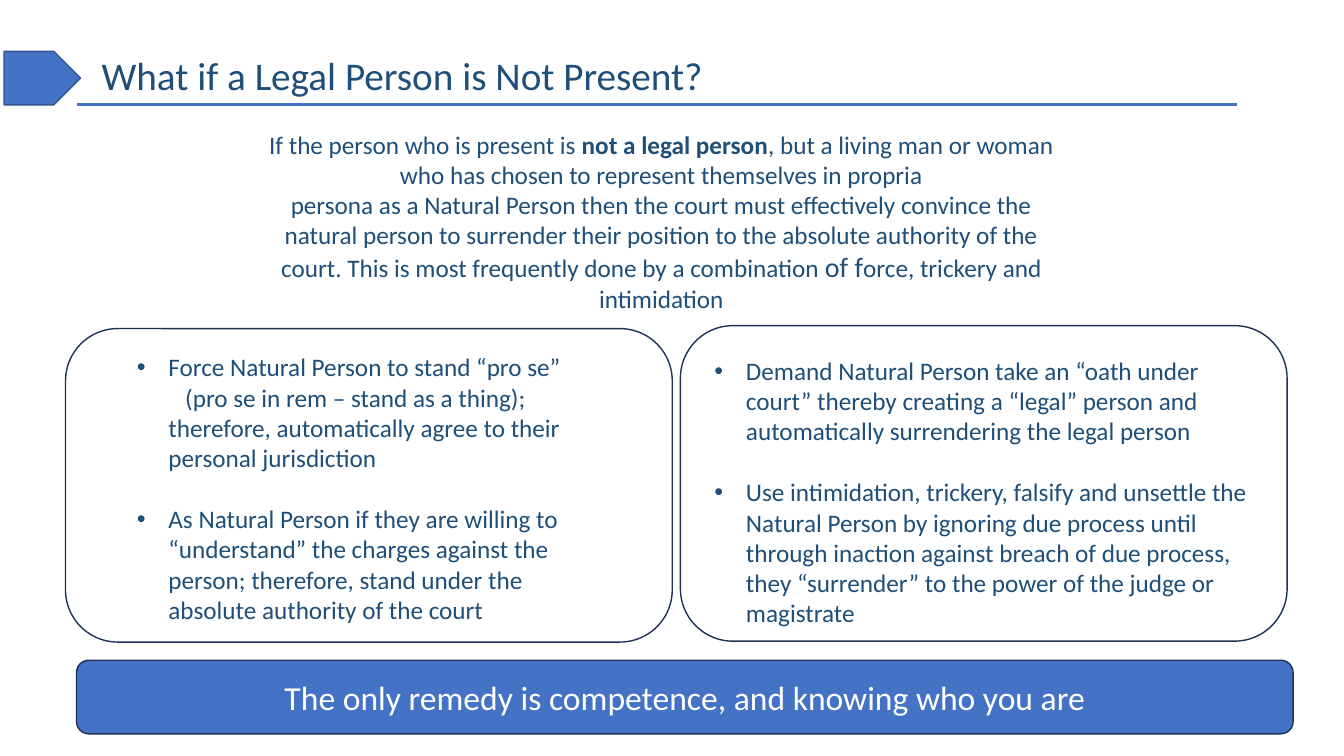
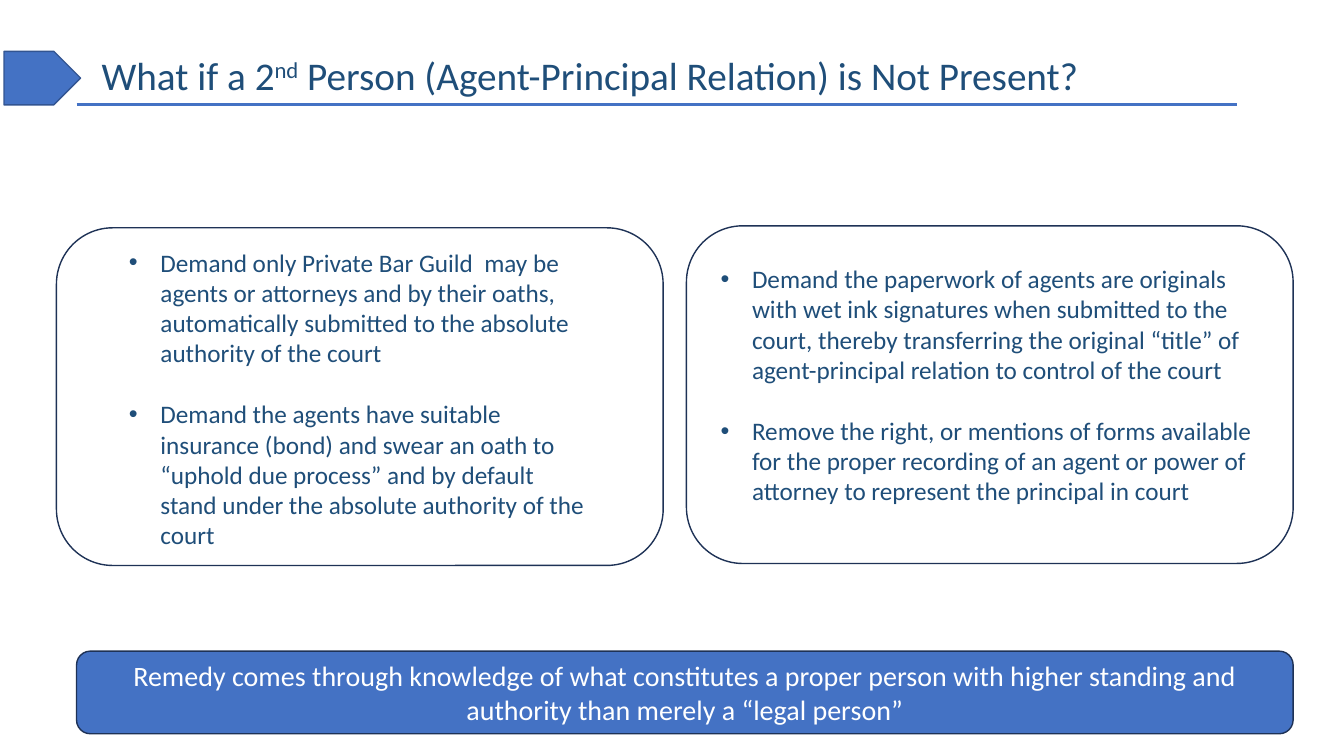
from pptx import Presentation
from pptx.dml.color import RGBColor
from pptx.enum import shapes, text
from pptx.oxml import parse_xml
from pptx.oxml.ns import nsdecls
from pptx.util import Pt

BLUE, EDGE, ARROW_EDGE = "4472C4", "1E3256", "325491"
NAVY, WHITE = "1F4E79", "FFFFFF"
FONT = "Calibri"
HANG = 22.5
LINE_GAP = 22
FRAME_W, BULLETS_W = 433.4, [345, 399]

SLIDES = [
    {
        "title": [("What if a Legal Person is Not Present?", {})],
        "intro": [
            [("If the person who is present is ", {}), ("not a legal person", {"bold": True}),
             (", but a living man or woman", {})],
            [("who has chosen to represent themselves in propria", {})],
            [("persona as a Natural Person then the court must effectively convince the", {})],
            [("natural person to surrender their position to the absolute authority of the", {})],
            [("court. This is most frequently done by a combination ", {}),
             ("of f", {"size": Pt(20)}), ("orce, trickery and", {})],
            [("intimidation", {})],
        ],
        "frames": [(46.8, 234.7, 223.9), (486, 232.6, 225.4)],
        "bullets": [
            (90.7, 247.7, 204, [
                ("bullet", "Force Natural Person to stand “pro se”"),
                (12, "(pro se in rem – stand as a thing);"),
                (0, "therefore, automatically agree to their personal jurisdiction"),
                ("bullet", "As Natural Person if they are willing to “understand” the charges "
                           "against the person; therefore, stand under the absolute authority "
                           "of the court"),
            ]),
            (503.3, 250.2, 204, [
                ("bullet", "Demand Natural Person take an “oath under court” thereby creating "
                           "a “legal” person and automatically surrendering the legal person"),
                ("bullet", "Use intimidation, trickery, falsify and unsettle the Natural Person "
                           "by ignoring due process until through inaction against breach of due "
                           "process, they “surrender” to the power of the judge or magistrate"),
            ]),
        ],
        "remedy": (471.6, 52.6, 24, "The only remedy is competence, and knowing who you are"),
    },
    {
        "title": [("What if a 2", {}), ("nd", {"baseline": "30000"}),
                  (" Person (Agent-Principal Relation) is Not Present?", {})],
        "intro": [],
        "frames": [(40.3, 162.7, 241.2), (490.3, 161.3, 241.2)],
        "bullets": [
            (85, 172.8, 225.4, [
                ("bullet", "Demand only Private Bar Guild  may be agents or attorneys and by "
                           "their oaths, automatically submitted to the absolute authority of "
                           "the court"),
                ("bullet", "Demand the agents have suitable insurance (bond) and swear an oath "
                           "to “uphold due process” and by default stand under the absolute "
                           "authority of the court"),
            ]),
            (507.6, 184.7, 182, [
                ("bullet", "Demand the paperwork of agents are originals with wet ink signatures "
                           "when submitted to the court, thereby transferring the original "
                           "“title” of agent-principal relation to control of the court"),
                ("bullet", "Remove the right, or mentions of forms available for the proper "
                           "recording of an agent or power of attorney to represent the "
                           "principal in court"),
            ]),
        ],
        "remedy": (465.1, 59, 20, "Remedy comes through knowledge of what constitutes a proper "
                                  "person with higher standing and authority than merely a "
                                  "“legal person”"),
    },
]


def color(hex_code):
    return RGBColor.from_string(hex_code)


def fill_text(tf, paragraphs, size, ink=NAVY, align=text.PP_ALIGN.LEFT):
    tf.word_wrap = True
    for i, runs in enumerate(paragraphs):
        p = tf.paragraphs[0] if i == 0 else tf.add_paragraph()
        p.alignment = align
        for words, style in runs:
            r = p.add_run()
            r.text = words
            r.font.name = FONT
            r.font.size = style.get("size", Pt(size))
            r.font.bold = style.get("bold")
            r.font.color.rgb = color(ink)
            if "baseline" in style:
                r._r.get_or_add_rPr().set("baseline", style["baseline"])


prs = Presentation()
prs.slide_width, prs.slide_height = Pt(960), Pt(540)

for content in SLIDES:
    s = prs.slides.add_slide(prs.slide_layouts[6])

    tf = s.shapes.add_textbox(Pt(65.5), Pt(36.7), Pt(720), Pt(37.4)).text_frame
    tf.vertical_anchor = text.MSO_ANCHOR.BOTTOM
    fill_text(tf, [content["title"]], 28)
    tf.paragraphs[0].line_spacing = 0.9

    rule = s.shapes.add_connector(shapes.MSO_CONNECTOR.STRAIGHT,
                                  Pt(54.7), Pt(74.9), Pt(883.4), Pt(74.9))
    rule.line.color.rgb = color(BLUE)
    rule.line.width = Pt(2.25)
    rule._element.spPr.append(parse_xml(f"<a:effectLst {nsdecls('a')}/>"))

    remedy_top, remedy_h, remedy_size, remedy_text = content["remedy"]
    panels = [(shapes.MSO_SHAPE.PENTAGON, 2.9, 36.7, 54.7, 38.2, BLUE, ARROW_EDGE)]
    panels += [(shapes.MSO_SHAPE.ROUNDED_RECTANGLE, x, y, FRAME_W, h, None, EDGE)
               for x, y, h in content["frames"]]
    panels.append((shapes.MSO_SHAPE.ROUNDED_RECTANGLE, 54.7, remedy_top, 869, remedy_h,
                   BLUE, EDGE))
    for kind, x, y, w, h, fill, edge in panels:
        sp = s.shapes.add_shape(kind, Pt(x), Pt(y), Pt(w), Pt(h))
        sp.shadow.inherit = False
        if fill:
            sp.fill.solid()
            sp.fill.fore_color.rgb = color(fill)
        else:
            sp.fill.background()
        sp.line.color.rgb = color(edge)
        sp.line.width = Pt(1)

    tf = sp.text_frame
    tf.margin_left = tf.margin_right = Pt(27)
    tf.vertical_anchor = text.MSO_ANCHOR.MIDDLE
    fill_text(tf, [[(remedy_text, {})]], remedy_size, WHITE, text.PP_ALIGN.CENTER)

    if content["intro"]:
        tf = s.shapes.add_textbox(Pt(2.9), Pt(88.6), Pt(939), Pt(143.3)).text_frame
        fill_text(tf, content["intro"], 18, align=text.PP_ALIGN.CENTER)

    for w, (x, y, h, items) in zip(BULLETS_W, content["bullets"]):
        tf = s.shapes.add_textbox(Pt(x), Pt(y), Pt(w), Pt(h)).text_frame
        fill_text(tf, [[(words, {})] for _, words in items], 18)
        for i, (p, (indent, _)) in enumerate(zip(tf.paragraphs, items)):
            bulleted = indent == "bullet"
            if bulleted and i:
                p.space_before = Pt(LINE_GAP)
            pPr = p._p.get_or_add_pPr()
            pPr.set("marL", str(Pt(HANG if bulleted else HANG + indent)))
            pPr.set("indent", str(Pt(-HANG if bulleted else 0)))
            if bulleted:
                pPr.append(parse_xml(f'<a:buFont {nsdecls("a")} typeface="Arial"/>'))
                pPr.append(parse_xml(f'<a:buChar {nsdecls("a")} char="•"/>'))

prs.save("out.pptx")
